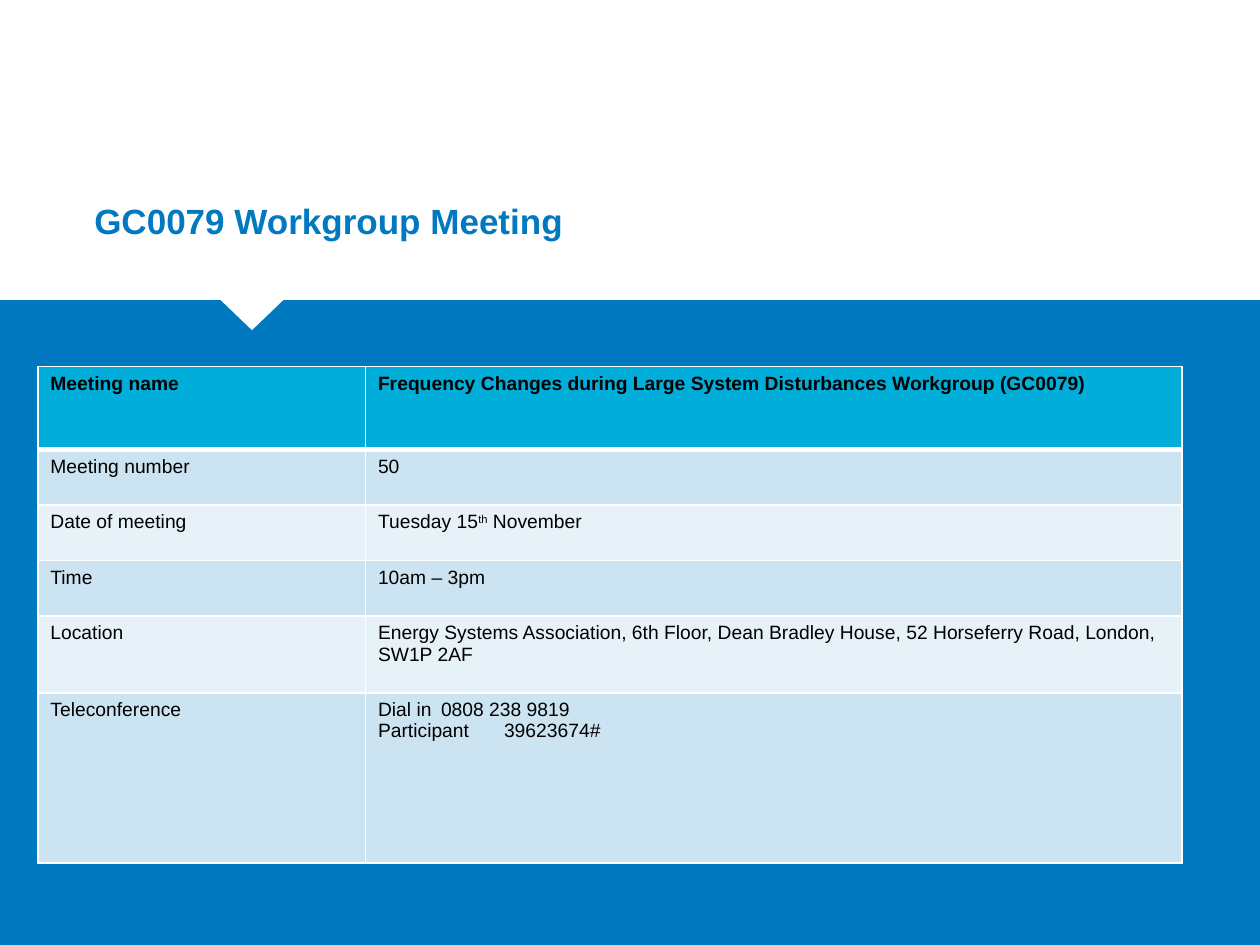
"""Builds the title slide with the meeting details table."""
import pptx
import pptx.dml.color
import pptx.enum.text
import pptx.oxml.ns
import pptx.util
from lxml import etree

Inches = pptx.util.Inches
COLORS = {
    "blue": "0079C1",
    "cyan": "00AED9",
    "band_dark": "CCE3F1",
    "band_light": "E7F2F8",
    "white": "FFFFFF",
    "black": "000000",
}


def rgb(name):
    return pptx.dml.color.RGBColor.from_string(COLORS[name])


class SlideBuilder:
    """Holds the style and the current slide."""

    font_name = "Arial"
    title_size = 20
    table_size = 11

    def __init__(self, slide):
        self.slide = slide

    def background(self, color):
        fill = self.slide.background.fill
        fill.solid()
        fill.fore_color.rgb = rgb(color)

    def outline(self, points, color):
        corners = [(Inches(x), Inches(y)) for x, y in points]
        builder = self.slide.shapes.build_freeform(*corners[0], scale=1.0)
        builder.add_line_segments(corners[1:], close=True)
        shape = builder.convert_to_shape()
        shape.shadow.inherit = False
        shape.fill.solid()
        shape.fill.fore_color.rgb = rgb(color)
        shape.line.fill.background()

    def run(self, paragraph, text, size, color, bold=False, superscript=False):
        run = paragraph.add_run()
        run.text = text
        run.font.name = self.font_name
        run.font.size = pptx.util.Pt(size)
        run.font.bold = bold
        run.font.color.rgb = rgb(color)
        if superscript:
            run.font._element.set("baseline", "30000")

    def title(self, text, left, top, width, height):
        shape = self.slide.shapes.add_textbox(
            Inches(left), Inches(top), Inches(width), Inches(height))
        frame = shape.text_frame
        frame.word_wrap = True
        frame.vertical_anchor = pptx.enum.text.MSO_ANCHOR.MIDDLE
        self.run(frame.paragraphs[0], text, self.title_size, "blue", bold=True)

    def border(self, cell, side, width):
        line = etree.Element(pptx.oxml.ns.qn(f"a:{side}"), w=str(pptx.util.Pt(width)))
        fill = etree.SubElement(line, pptx.oxml.ns.qn("a:solidFill"))
        etree.SubElement(fill, pptx.oxml.ns.qn("a:srgbClr"), val=COLORS["white"])
        return line

    def cell(self, cell, paragraphs, color, header, below_header):
        cell.fill.solid()
        cell.fill.fore_color.rgb = rgb(color)
        widths = {"lnL": 1, "lnR": 1, "lnT": 3 if below_header else 1,
                  "lnB": 3 if header else 1}
        properties = cell._tc.get_or_add_tcPr()
        for index, (side, width) in enumerate(widths.items()):
            properties.insert(index, self.border(cell, side, width))
        frame = cell.text_frame
        for index, runs in enumerate(paragraphs):
            paragraph = frame.add_paragraph() if index else frame.paragraphs[0]
            for position, text in enumerate(runs):
                self.run(paragraph, text, self.table_size, "black",
                         bold=header, superscript=position == 1)

    def table(self, rows, left, top, widths, heights):
        table = self.slide.shapes.add_table(
            len(rows), len(widths), Inches(left), Inches(top),
            Inches(sum(widths)), Inches(sum(heights))).table
        for column, width in zip(table.columns, widths):
            column.width = Inches(width)
        for index, (label, details) in enumerate(rows):
            table.rows[index].height = Inches(heights[index])
            band = "band_dark" if index % 2 else "band_light"
            color = band if index else "cyan"
            for column, paragraphs in enumerate(([[label]], details)):
                self.cell(table.cell(index, column), paragraphs, color,
                          header=index == 0, below_header=index == 1)


MEETING_ROWS = [
    ("Meeting name",
     [["Frequency Changes during Large System Disturbances Workgroup (GC0079)"]]),
    ("Meeting number", [["50"]]),
    ("Date of meeting", [["Tuesday 15", "th", " November"]]),
    ("Time", [["10am – 3pm"]]),
    ("Location",
     [["Energy Systems Association, 6th Floor, Dean Bradley House, "
       "52 Horseferry Road, London, SW1P 2AF"]]),
    ("Teleconference",
     [["Dial in\t0808 238 9819"], ["Participant\t39623674#"]]),
]


def main():
    presentation = pptx.Presentation()
    presentation.slide_width = Inches(10)
    presentation.slide_height = Inches(7.5)
    slide = presentation.slides.add_slide(presentation.slide_layouts[6])
    builder = SlideBuilder(slide)
    builder.background("blue")
    builder.outline([(0, 0), (0, 2.38), (1.75, 2.38), (2, 2.62),
                     (2.25, 2.38), (10, 2.38), (10, 0)], "white")
    builder.title("GC0079 Workgroup Meeting", 0.65, 1.53, 8.8, 0.44)
    builder.table(MEETING_ROWS, 0.3, 2.91, [2.6, 6.48],
                  [0.66, 0.44, 0.44, 0.44, 0.61, 1.35])
    presentation.save("out.pptx")


if __name__ == "__main__":
    main()
